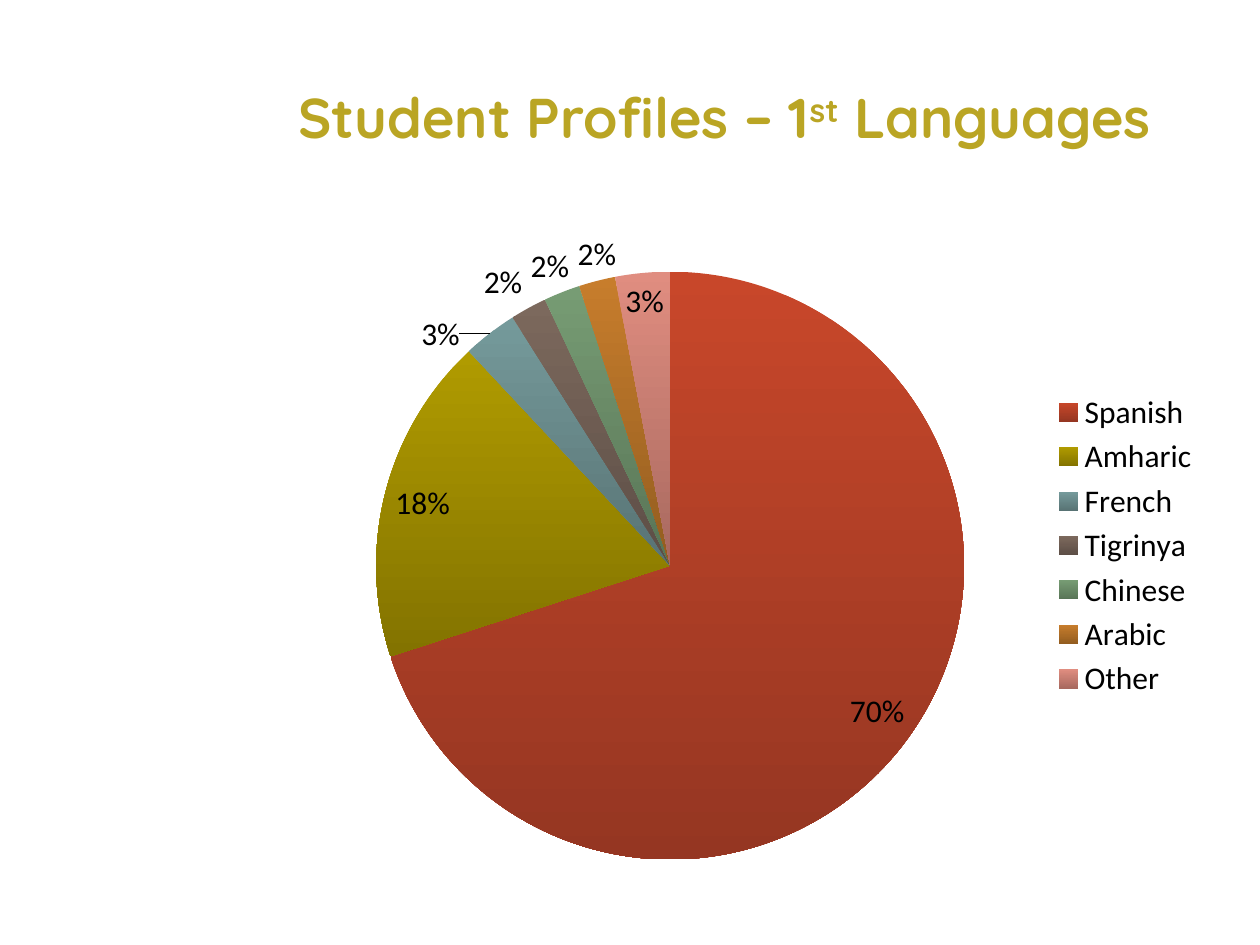
from lxml import etree
from pptx import Presentation
from pptx.chart.data import CategoryChartData
from pptx.dml.color import RGBColor
from pptx.enum.chart import XL_CHART_TYPE, XL_LABEL_POSITION, XL_LEGEND_POSITION
from pptx.enum.text import MSO_ANCHOR, PP_ALIGN
from pptx.oxml.ns import qn
from pptx.util import Inches, Pt

COLORS = {"title": "BAA524", "text": "000000"}

# Language: share, gradient top, gradient bottom
LANGUAGES = {
    "Spanish": (0.70, "C8472A", "953622"),
    "Amharic": (0.18, "B09B00", "837300"),
    "French": (0.03, "759A9B", "587374"),
    "Tigrinya": (0.02, "7C695D", "5D4E46"),
    "Chinese": (0.02, "779C74", "587456"),
    "Arabic": (0.02, "C77D2C", "935D20"),
    "Other": (0.03, "E08D80", "A8695F"),
}

prs = Presentation()
prs.slide_width, prs.slide_height = Inches(10), Inches(7.5)
slide = prs.slides.add_slide(prs.slide_layouts[5])

# Title
title = slide.shapes.title
title.left, title.top = Inches(1.75), Inches(0.3)
title.width, title.height = Inches(8), Inches(1.25)
title.text_frame.vertical_anchor = MSO_ANCHOR.MIDDLE
heading = title.text_frame.paragraphs[0]
heading.alignment = PP_ALIGN.CENTER
heading.font.name = "Quicksand"
heading.font.size = Pt(32)
heading.font.bold = True
heading.font.color.rgb = RGBColor.from_string(COLORS["title"])
for wording in ("Student Profiles – 1", "st", " Languages"):
    run = heading.add_run()
    run.text = wording
    if wording == "st":
        run.font._element.set("baseline", "30000")

# Pie of first languages
shares = CategoryChartData(number_format="0%")
shares.categories = list(LANGUAGES)
shares.add_series("Series 1", [share for share, _, _ in LANGUAGES.values()])
pie = slide.shapes.add_chart(
    XL_CHART_TYPE.PIE, Inches(2.33), Inches(1.67), Inches(7.29), Inches(5.32), shares
).chart
pie.has_title = False
pie.font.name = "Calibri"
pie.font.size = Pt(18)
pie.font.color.rgb = RGBColor.from_string(COLORS["text"])
pie.has_legend = True
pie.legend.position = XL_LEGEND_POSITION.RIGHT
pie.legend.include_in_layout = False

# Slices, shaded from top to bottom
plot = pie.plots[0]
plot.vary_by_categories = True
for index, (_, *shades) in enumerate(LANGUAGES.values()):
    fill = plot.series[0].points[index].format.fill
    fill.gradient()
    fill.gradient_angle = 270
    for stop, shade in zip(fill.gradient_stops, shades):
        stop.color.rgb = RGBColor.from_string(shade)

# Share labels
plot.has_data_labels = True
labels = plot.data_labels
labels.show_value = True
labels.show_percentage = False
labels.number_format = "0%"
labels.number_format_is_linked = False
labels.position = XL_LABEL_POSITION.BEST_FIT

# Pie position within the chart
plot_area = pie._chartSpace.chart.plotArea
for old_layout in plot_area.findall(qn("c:layout")):
    plot_area.remove(old_layout)
layout = etree.Element(qn("c:layout"))
manual = etree.SubElement(layout, qn("c:manualLayout"))
for tag, setting in (
    ("layoutTarget", "inner"), ("xMode", "edge"), ("yMode", "edge"),
    ("x", "0.09"), ("y", "0.09"), ("w", "0.64"), ("h", "0.88"),
):
    etree.SubElement(manual, qn(f"c:{tag}")).set("val", setting)
plot_area.insert(0, layout)

prs.save("out.pptx")
